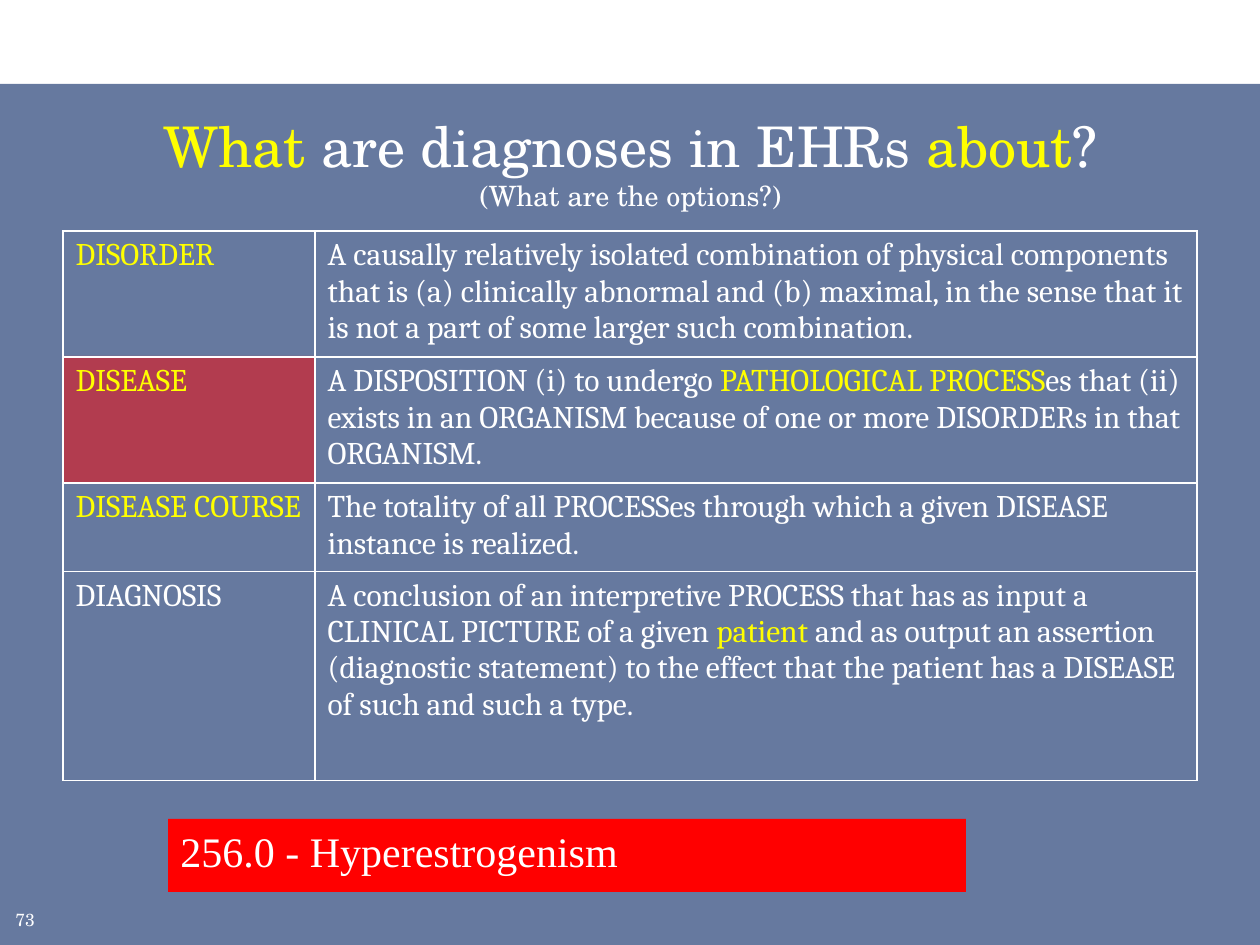
from lxml import etree
from pptx import Presentation
from pptx.dml.color import RGBColor
from pptx.enum.shapes import MSO_SHAPE
from pptx.enum.text import MSO_ANCHOR, PP_ALIGN
from pptx.oxml.ns import qn
from pptx.util import Pt

PX = 914400 / 126
RECTANGLE = MSO_SHAPE.RECTANGLE
LEFT, CENTER = PP_ALIGN.LEFT, PP_ALIGN.CENTER
TOP, MIDDLE = MSO_ANCHOR.TOP, MSO_ANCHOR.MIDDLE

WHITE = RGBColor(0xFF, 0xFF, 0xFF)
YELLOW = RGBColor(0xFF, 0xFF, 0x00)
RED = RGBColor(0xFF, 0x00, 0x00)
NAVY = RGBColor(0x00, 0x20, 0x60)

SCHOLA, CAMBRIA, TIMES = "TeX Gyre Schola", "Cambria", "Times New Roman"

COLUMNS = [252, 882]
DEFINITIONS = [
    (124, [("DISORDER", YELLOW)],
     [("A causally relatively isolated combination of physical components that is "
       "(a) clinically abnormal and (b) maximal, in the sense that it is not a part "
       "of some larger such combination.", WHITE)]),
    (126, [("DISEASE", YELLOW)],
     [("A DISPOSITION (i) to undergo ", WHITE), ("PATHOLOGICAL PROCESS", YELLOW),
      ("es that (ii) exists in an ORGANISM because of one or more DISORDERs in that "
       "ORGANISM.", WHITE)]),
    (86, [("DISEASE COURSE", YELLOW)],
     [("The totality of all PROCESSes through which a given DISEASE instance is "
       "realized.", WHITE)]),
    (209, [("DIAGNOSIS", WHITE)],
     [("A conclusion of an interpretive PROCESS that has as input a CLINICAL PICTURE "
       "of a given ", WHITE), ("patient", YELLOW),
      (" and as output an assertion (diagnostic statement) to the effect that the "
       "patient has a DISEASE of such and such a type.", WHITE)]),
]


def px(*lengths):
    return [round(length * PX) for length in lengths]


def write(paragraph, text, *, size, font, color=WHITE):
    run = paragraph.add_run()
    run.text = text
    run.font.size = Pt(size)
    run.font.name = font
    run.font.color.rgb = color


def add_panel(slide, box, color, opacity=100):
    panel = slide.shapes.add_shape(RECTANGLE, *px(*box))
    panel.shadow.inherit = False
    panel.fill.solid()
    panel.fill.fore_color.rgb = color
    panel.line.fill.background()
    if opacity < 100:
        tint = panel.fill._xPr.find(".//" + qn("a:srgbClr"))
        etree.SubElement(tint, qn("a:alpha"), val=str(opacity * 1000))
    return panel


def add_title(slide, box):
    title = slide.shapes.title
    title.element.getparent().append(title.element)
    title.left, title.top, title.width, title.height = px(*box)
    frame = title.text_frame
    frame.vertical_anchor = MIDDLE
    heading = frame.paragraphs[0]
    heading.alignment = CENTER
    for words, color in [("What", YELLOW), (" are diagnoses in EHRs ", WHITE),
                         ("about", YELLOW), ("?", WHITE)]:
        write(heading, words, size=32, font=SCHOLA, color=color)
    heading.add_line_break()
    write(heading, "(What are the options?)", size=16, font=SCHOLA)


def set_borders(cell):
    properties = cell._tc.get_or_add_tcPr()
    for position, side in enumerate(("lnL", "lnR", "lnT", "lnB")):
        border = etree.Element(qn("a:" + side), w=str(Pt(1)))
        fill = etree.SubElement(border, qn("a:solidFill"))
        etree.SubElement(fill, qn("a:srgbClr"), val=str(WHITE))
        properties.insert(position, border)


def add_definitions(slide, left, top):
    heights = [height for height, _, _ in DEFINITIONS]
    table = slide.shapes.add_table(len(heights), len(COLUMNS),
                                   *px(left, top, sum(COLUMNS), sum(heights))).table
    table.first_row = False
    table.horz_banding = False
    for column, width in zip(table.columns, px(*COLUMNS)):
        column.width = width
    for row, (height, *entries) in zip(table.rows, DEFINITIONS):
        row.height = px(height)[0]
        for cell, entry in zip(row.cells, entries):
            cell.fill.background()
            set_borders(cell)
            for words, color in entry:
                write(cell.text_frame.paragraphs[0], words,
                      size=18, font=CAMBRIA, color=color)


def add_example(slide, box):
    frame = add_panel(slide, box, RED).text_frame
    frame.word_wrap = True
    frame.vertical_anchor = TOP
    code = frame.paragraphs[0]
    code.alignment = LEFT
    write(code, "256.0 - Hyperestrogenism", size=24, font=TIMES)


def add_page_number(slide, box):
    frame = slide.shapes.add_textbox(*px(*box)).text_frame
    frame.word_wrap = True
    frame.vertical_anchor = MIDDLE
    write(frame.paragraphs[0], "73", size=10, font=SCHOLA)


def main():
    deck = Presentation()
    deck.slide_width, deck.slide_height = px(1260, 945)
    slide = deck.slides.add_slide(deck.slide_layouts[5])
    add_panel(slide, (0, 84, 1260, 861), NAVY, opacity=60)
    add_page_number(slide, (3, 903, 50, 32))
    add_panel(slide, (63, 356, 252, 126), RED, opacity=50)
    add_definitions(slide, 63, 231)
    add_example(slide, (168, 819, 798, 73))
    add_title(slide, (32, 109, 1197, 105))
    deck.save("out.pptx")


if __name__ == "__main__":
    main()
